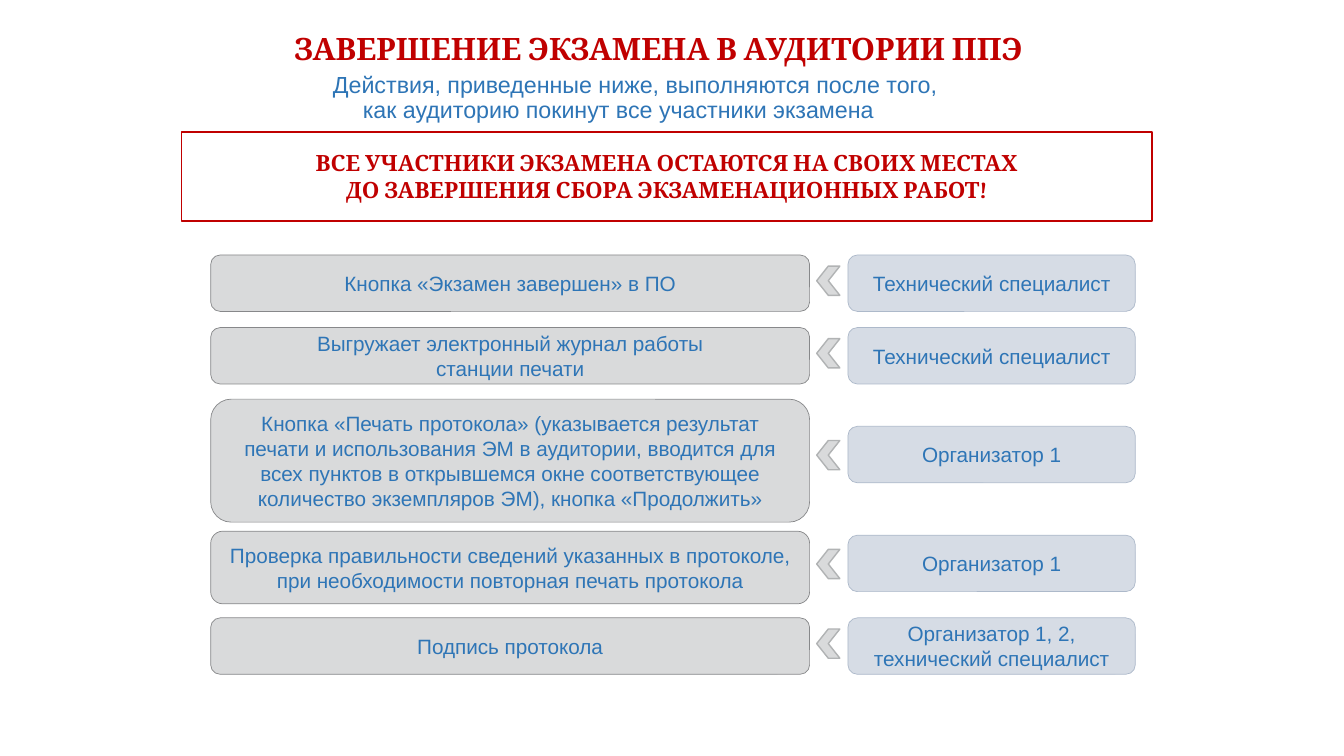
from pptx import Presentation
from pptx.dml.color import RGBColor
from pptx.enum.shapes import MSO_SHAPE as Shape
from pptx.enum.text import MSO_ANCHOR as Anchor, PP_ALIGN as Align
from pptx.util import Inches, Pt

COLORS = {
    "red": "C00000",
    "blue": "2E75B6",
    "step": "D9DADB",
    "step_line": "87888A",
    "role": "D6DCE5",
    "role_line": "ADB9CA",
    "chevron_line": "B1B3B4",
}
STEP_LEFT, STEP_WIDTH = 2.09, 5.94
ROLE_LEFT, ROLE_WIDTH, ROLE_HEIGHT = 8.41, 2.85, 0.56
CHEVRON_LEFT, CHEVRON_WIDTH, CHEVRON_HEIGHT = 8.1, 0.23, 0.29

# Each row: step text, step top, step height, role text, role top, chevron top
ROWS = [
    ("Кнопка «Экзамен завершен» в ПО", 2.53, 0.56,
     "Технический специалист", 2.53, 2.64),
    ("Выгружает электронный журнал работы\nстанции печати", 3.25, 0.56,
     "Технический специалист", 3.25, 3.36),
    ("Кнопка «Печать протокола» (указывается результат печати и использования "
     "ЭМ в аудитории, вводится для всех пунктов в открывшемся окне "
     "соответствующее количество экземпляров ЭМ), кнопка «Продолжить»", 3.96, 1.22,
     "Организатор 1", 4.23, 4.37),
    ("Проверка правильности сведений указанных в протоколе, "
     "при необходимости повторная печать протокола", 5.27, 0.72,
     "Организатор 1", 5.31, 5.45),
    ("Подпись протокола", 6.13, 0.56,
     "Организатор 1, 2,\vтехнический специалист", 6.13, 6.24),
]


def rgb(color):
    """Return the named colour."""
    return RGBColor.from_string(COLORS[color])


def write(frame, text, size=14.8, font="Arial", color="blue", bold=False,
          align=Align.CENTER, anchor=Anchor.MIDDLE, spacing=None, inset=0.1):
    """Fill a text frame with formatted paragraphs."""
    frame.word_wrap = True
    frame.vertical_anchor = anchor
    frame.margin_left = frame.margin_right = Inches(inset)
    frame.margin_top = frame.margin_bottom = Inches(0.05)
    frame.text = text
    for paragraph in frame.paragraphs:
        paragraph.alignment = align
        if spacing:
            paragraph.line_spacing = spacing
        for run in paragraph.runs:
            run.font.size = Pt(size)
            run.font.name = font
            run.font.bold = bold
            run.font.color.rgb = rgb(color)


def add_text(slide, box, text, **style):
    """Add a text box and return its frame."""
    frame = slide.shapes.add_textbox(*map(Inches, box)).text_frame
    write(frame, text, **style)
    return frame


def add_block(slide, kind, box, line, fill=None, weight=0.5):
    """Add an outlined shape without shadow."""
    block = slide.shapes.add_shape(kind, *map(Inches, box))
    block.shadow.inherit = False
    if fill:
        block.fill.solid()
        block.fill.fore_color.rgb = rgb(fill)
    else:
        block.fill.background()
    block.line.color.rgb = rgb(line)
    block.line.width = Pt(weight)
    return block


def add_card(slide, box, text, kind):
    """Add a rounded card for a step or a role."""
    card = add_block(slide, Shape.ROUNDED_RECTANGLE, box, f"{kind}_line", kind)
    write(card.text_frame, text, inset=0.11)


def add_row(slide, step, step_top, step_height, role, role_top, chevron_top):
    """Add a step, the role responsible and the chevron between them."""
    add_card(slide, (ROLE_LEFT, role_top, ROLE_WIDTH, ROLE_HEIGHT), role, "role")
    add_card(slide, (STEP_LEFT, step_top, STEP_WIDTH, step_height), step, "step")
    chevron_box = (CHEVRON_LEFT, chevron_top, CHEVRON_WIDTH, CHEVRON_HEIGHT)
    chevron = add_block(slide, Shape.CHEVRON, chevron_box, "chevron_line", "step", 1)
    chevron.rotation = 180


def main():
    """Build the slide and save it."""
    deck = Presentation()
    deck.slide_width, deck.slide_height = Inches(13.33), Inches(7.5)
    slide = deck.slides.add_slide(deck.slide_layouts[6])

    add_text(slide, (2.82, 0.06, 8.13, 0.89), "ЗАВЕРШЕНИЕ ЭКЗАМЕНА В АУДИТОРИИ ППЭ",
             size=22, font="Cambria", color="red", bold=True,
             align=Align.LEFT, spacing=0.9)
    subtitle = add_text(
        slide, (2.09, 0.68, 8.04, 0.7),
        "Действия, приведенные ниже, выполняются после того,\v"
        "как аудиторию покинут все участники экзамена",
        size=16.6, anchor=Anchor.TOP, spacing=0.9)
    indents = subtitle.paragraphs[0]._p.get_or_add_pPr()
    indents.set("marL", str(Inches(0.04)))
    indents.set("indent", str(Inches(0.33)))

    for row in ROWS:
        add_row(slide, *row)

    warning = add_block(slide, Shape.RECTANGLE, (1.8, 1.31, 9.63, 0.88), "red", weight=1.25)
    write(warning.text_frame,
          "ВСЕ УЧАСТНИКИ ЭКЗАМЕНА ОСТАЮТСЯ НА СВОИХ МЕСТАХ\n"
          "ДО ЗАВЕРШЕНИЯ СБОРА ЭКЗАМЕНАЦИОННЫХ РАБОТ!",
          size=16, font="Cambria", color="red", bold=True)

    deck.save("out.pptx")


if __name__ == "__main__":
    main()
